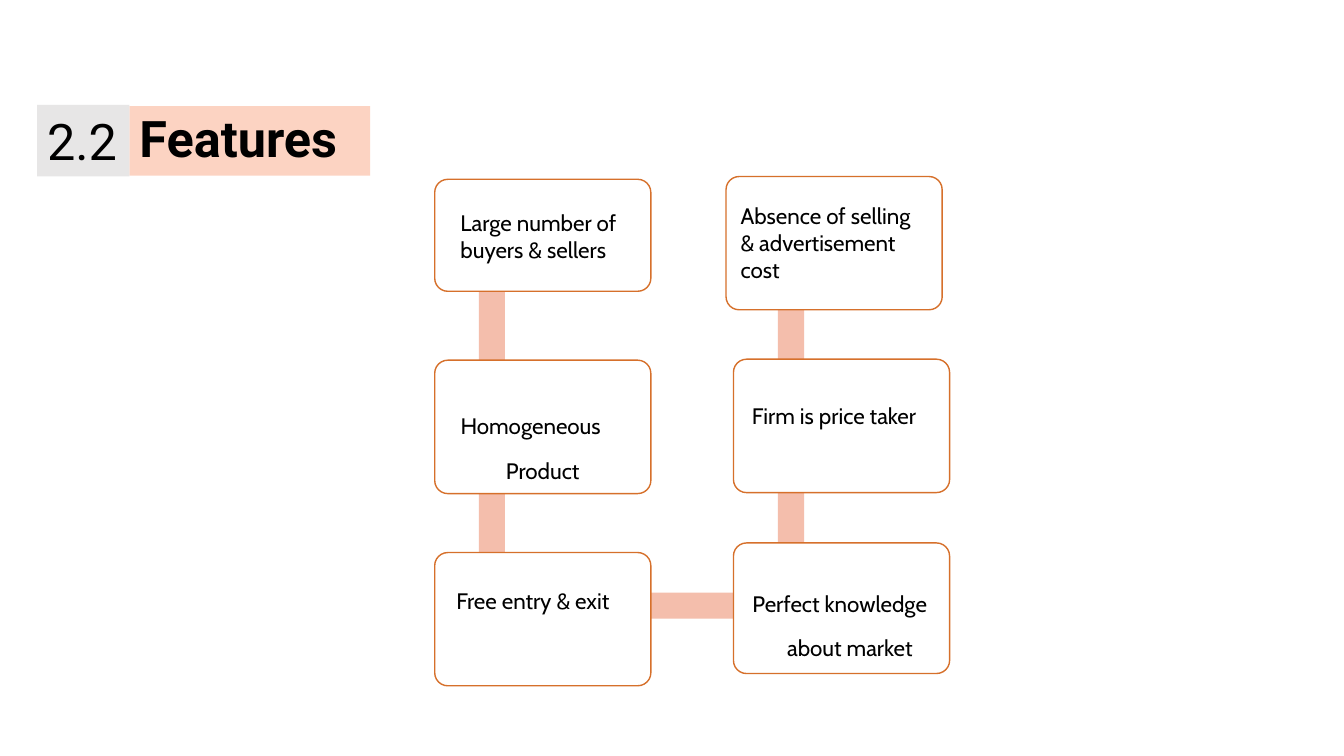
import pptx
import pptx.util
import pptx.dml.color
import pptx.enum.shapes
import pptx.enum.text

Pt = pptx.util.Pt
COLORS = {"black": "000000", "white": "FFFFFF", "peach": "FCD3C2",
          "grey": "E7E6E6", "salmon": "F4BEAC", "orange": "D6702B"}


class Deck:
    body_font = "Cabin"
    title_font = "Roboto"
    body_size = 16
    title_size = 36
    radius = 9.36

    def __init__(self, prs):
        self.s = prs.slides.add_slide(prs.slide_layouts[5])

    def rgb(self, name):
        return pptx.dml.color.RGBColor.from_string(COLORS[name])

    def place(self, sp, x, y, w, h):
        sp.left, sp.top, sp.width, sp.height = Pt(x), Pt(y), Pt(w), Pt(h)

    def paint(self, sp, fill):
        sp.fill.solid()
        sp.fill.fore_color.rgb = self.rgb(fill)

    def add_text(self, tf, text, font, size, bold=False):
        p = tf.paragraphs[0]
        p.alignment = pptx.enum.text.PP_ALIGN.LEFT
        r = p.add_run()
        r.text = text
        r.font.name = font
        r.font.size = Pt(size)
        r.font.bold = bold
        r.font.color.rgb = self.rgb("black")
        return p

    def title(self, text, x, y, w, h):
        sp = self.s.shapes.title
        self.place(sp, x, y, w, h)
        self.paint(sp, "peach")
        tf = sp.text_frame
        tf.auto_size = pptx.enum.text.MSO_AUTO_SIZE.NONE
        tf.vertical_anchor = pptx.enum.text.MSO_ANCHOR.MIDDLE
        p = self.add_text(tf, text, self.title_font, self.title_size, True)
        p.line_spacing = 0.9

    def block(self, x, y, w, h, fill, line=None, rounded=False):
        kinds = pptx.enum.shapes.MSO_SHAPE
        kind = kinds.ROUNDED_RECTANGLE if rounded else kinds.RECTANGLE
        sp = self.s.shapes.add_shape(kind, Pt(x), Pt(y), Pt(w), Pt(h))
        sp.shadow.inherit = False
        self.paint(sp, fill)
        if rounded:
            sp.adjustments[0] = self.radius / min(w, h)
        if line:
            sp.line.color.rgb = self.rgb(line)
            sp.line.width = Pt(1)
        else:
            sp.line.fill.background()
        return sp

    def number(self, text, x, y, w, h):
        tf = self.block(x, y, w, h, "grey").text_frame
        tf.vertical_anchor = pptx.enum.text.MSO_ANCHOR.TOP
        self.add_text(tf, text, self.title_font, self.title_size)

    def label(self, text, x, y, w, h, hanging=0):
        sp = self.s.shapes.add_textbox(Pt(x), Pt(y), Pt(w), Pt(h))
        tf = sp.text_frame
        tf.word_wrap = True
        tf.margin_left = tf.margin_right = tf.margin_bottom = 0
        tf.margin_top = Pt(3.6 if hanging else 0.7)
        p = self.add_text(tf, text, self.body_font, self.body_size)
        if hanging:
            p.line_spacing = 1.65
            pPr = p._p.get_or_add_pPr()
            pPr.set("marL", str(Pt(hanging)))
            pPr.set("indent", str(-Pt(hanging)))


def main():
    prs = pptx.Presentation()
    prs.slide_width, prs.slide_height = Pt(960), Pt(540)
    deck = Deck(prs)
    deck.title("Features", 92.4, 75.8, 172, 49.6)
    deck.number("2.2", 26.6, 74.9, 65.8, 51.1)

    bar = 18.7
    for x, y, h in [(342, 131, 127), (342, 261, 151.5),
                    (555.7, 129.6, 127), (555.7, 260, 151.5)]:
        deck.block(x, y, bar, h, "salmon")
    deck.block(464.6, 423.3, 88.5, bar, "salmon")

    features = [
        (310.5, 128.1, 80, "Large number of buyers & sellers", 328.9, 149, 134.6, 60, 0),
        (310.5, 257.3, 95.3, "Homogeneous Product", 329, 278.6, 142.6, 56.9, 32.4),
        (310.5, 394.7, 95.2, "Free entry & exit", 326, 419, 164.9, 20.2, 0),
        (518.6, 126.1, 95.2, "Absence of selling & advertisement cost", 529, 144, 128.2, 79.9, 0),
        (523.9, 256.6, 95.3, "Firm is price taker", 537.1, 286.6, 174.2, 20.2, 0),
        (523.9, 387.8, 93.3, "Perfect knowledge about market", 537.4, 405.5, 133.2, 56.9, 24.8),
    ]
    for x, y, h, text, tx, ty, tw, th, hanging in features:
        deck.block(x, y, 154.4, h, "white", "orange", rounded=True)
        deck.label(text, tx, ty, tw, th, hanging)

    prs.save("out.pptx")


if __name__ == "__main__":
    main()
